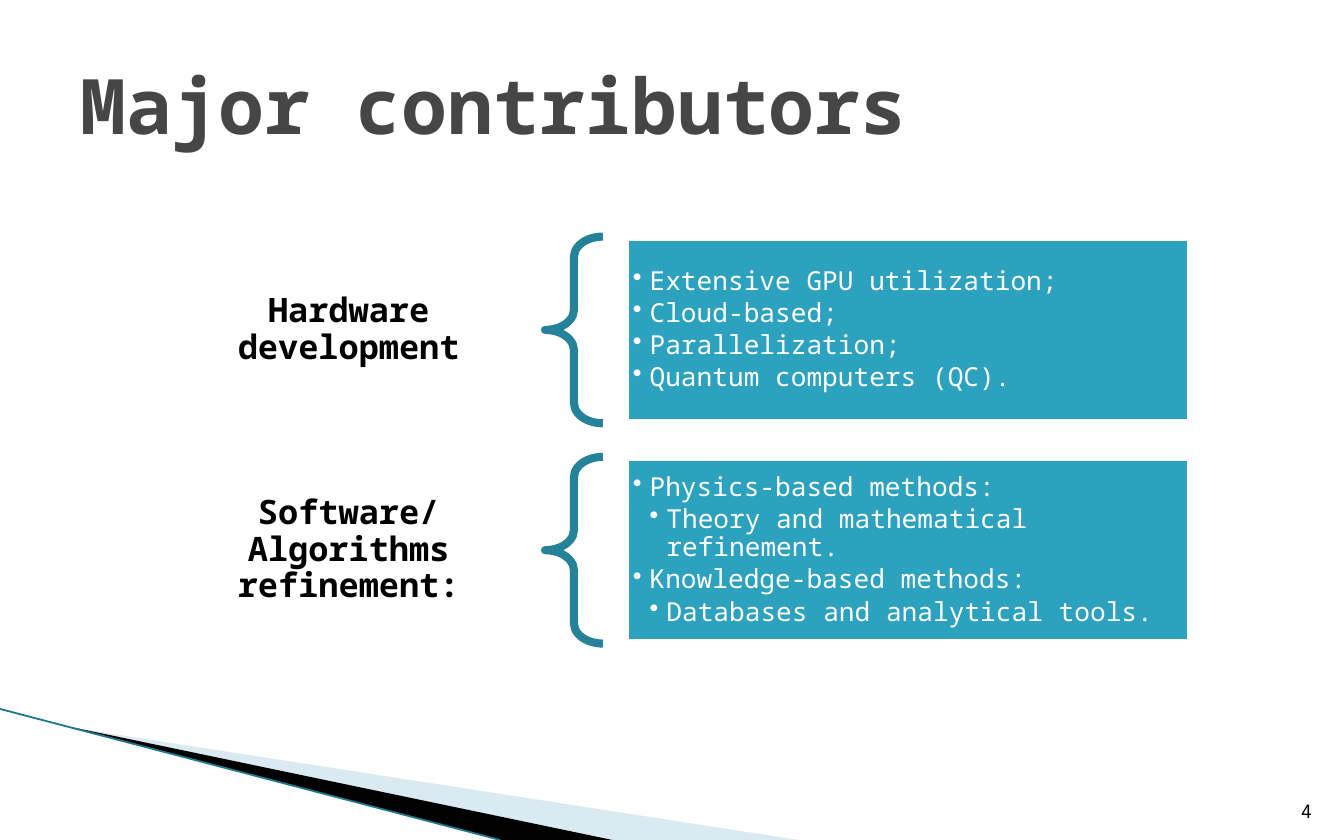
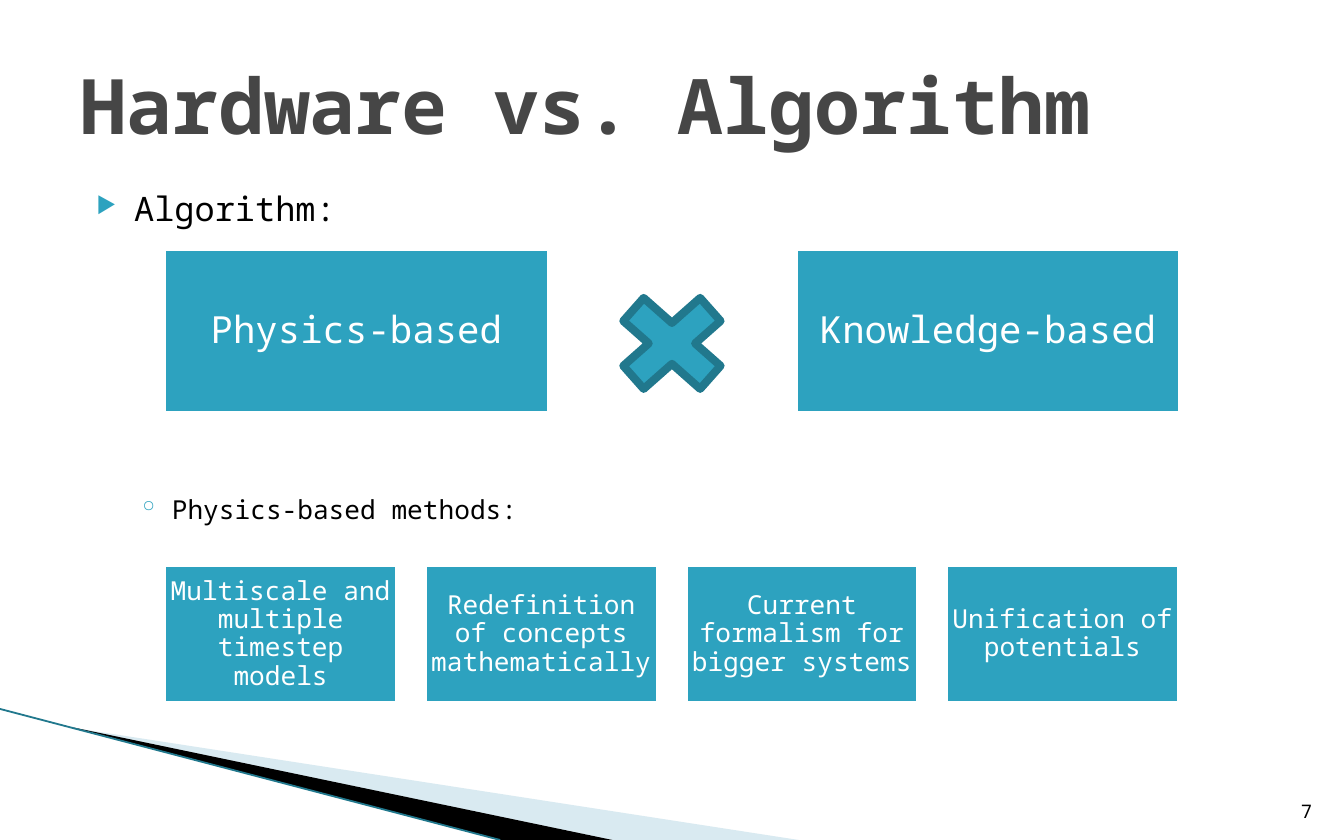
from collections.abc import Sequence
from dataclasses import dataclass

from lxml import etree
from pptx import Presentation
from pptx.dml.color import RGBColor
from pptx.enum.shapes import MSO_CONNECTOR, MSO_SHAPE
from pptx.enum.text import MSO_ANCHOR, PP_ALIGN
from pptx.oxml.ns import qn
from pptx.util import Pt

RECTANGLE, BRACE, CROSS = MSO_SHAPE.RECTANGLE, MSO_SHAPE.LEFT_BRACE, MSO_SHAPE.MATH_MULTIPLY
STRAIGHT = MSO_CONNECTOR.STRAIGHT
TOP, MIDDLE, BOTTOM = MSO_ANCHOR.TOP, MSO_ANCHOR.MIDDLE, MSO_ANCHOR.BOTTOM
LEFT, CENTER, RIGHT = PP_ALIGN.LEFT, PP_ALIGN.CENTER, PP_ALIGN.RIGHT


@dataclass(frozen=True)
class Theme:
    font: str = "Noto Sans Mono"
    ink: str = "000000"
    white: str = "FFFFFF"
    title: str = "464646"
    accent: str = "2DA2BF"
    brace: str = "248299"
    edge: str = "21788D"
    pale: str = "A0CBDC"
    title_size: float = 41
    label_size: float = 20
    heading_size: float = 18
    text_size: float = 14
    number_size: float = 10
    outline: float = 4.33
    hairline: float = 0.95
    tight: float = 0.9


THEME = Theme()
WIDTH, HEIGHT = 720, 450


@dataclass(frozen=True)
class Area:
    left: float
    top: float
    width: float
    height: float

    def lengths(self) -> tuple:
        return Pt(self.left), Pt(self.top), Pt(self.width), Pt(self.height)


@dataclass(frozen=True)
class Bullet:
    mark: str
    indent: float
    hanging: float
    color: str
    percent: int = 100


@dataclass(frozen=True)
class Item:
    text: str
    bullet: Bullet
    size: float = THEME.text_size
    before: float = 0


@dataclass(frozen=True)
class Contributor:
    name: str
    items: tuple[Item, ...]


POINT = Bullet("•", 9, 9, THEME.white)
SUBPOINT = Bullet("•", 18, 9, THEME.white)
ARROW = Bullet("▶", 28.8, 20.2, THEME.accent, 68)
RING = Bullet("◦", 49, 18, THEME.accent)

CONTRIBUTORS = (
    Contributor("Hardware development", (
        Item("Extensive GPU utilization;", POINT),
        Item("Cloud-based;", POINT),
        Item("Parallelization;", POINT),
        Item("Quantum computers (QC).", POINT),
    )),
    Contributor("Software/Algorithms refinement:", (
        Item("Physics-based methods:", POINT),
        Item("Theory and mathematical refinement.", SUBPOINT),
        Item("Knowledge-based methods:", POINT),
        Item("Databases and analytical tools.", SUBPOINT),
    )),
)
APPROACHES = ("Physics-based", "Knowledge-based")
METHODS = (
    "Multiscale and multiple timestep models",
    "Redefinition of concepts mathematically",
    "Current formalism for bigger systems",
    "Unification of potentials",
)


def rgb(color: str) -> RGBColor:
    return RGBColor.from_string(color)


def prepare_frame(frame, *, anchor=MIDDLE, inset=(7.2, 3.6)) -> None:
    frame.word_wrap = True
    frame.vertical_anchor = anchor
    frame.margin_left = frame.margin_right = Pt(inset[0])
    frame.margin_top = frame.margin_bottom = Pt(inset[1])


def write(para, text: str, *, size: float, color: str = THEME.ink, bold: bool = False,
          align=LEFT, spacing: float = 1, before: float = 0, after: float = 0) -> None:
    para.alignment = align
    para.line_spacing = spacing
    para.space_before, para.space_after = Pt(before), Pt(after)
    span = para.add_run()
    span.text = text
    span.font.name, span.font.size, span.font.bold = THEME.font, Pt(size), bold
    span.font.color.rgb = rgb(color)


def add_bullet(para, bullet: Bullet) -> None:
    properties = para._p.get_or_add_pPr()
    properties.set("marL", str(Pt(bullet.indent)))
    properties.set("indent", str(-Pt(bullet.hanging)))
    color = etree.SubElement(properties, qn("a:buClr"))
    etree.SubElement(color, qn("a:srgbClr"), val=bullet.color)
    etree.SubElement(properties, qn("a:buSzPct"), val=str(bullet.percent * 1000))
    etree.SubElement(properties, qn("a:buChar"), char=bullet.mark)


def write_list(frame, items: Sequence[Item], *, color: str, spacing: float = 1,
               after: float = 0) -> None:
    for index, item in enumerate(items):
        para = frame.add_paragraph() if index else frame.paragraphs[0]
        add_bullet(para, item.bullet)
        write(para, item.text, size=item.size, color=color, spacing=spacing,
              before=item.before, after=after)


def add_text(page, area: Area, text: str, *, anchor=MIDDLE, inset=(7.2, 3.6), **style) -> None:
    box = page.shapes.add_textbox(*area.lengths())
    prepare_frame(box.text_frame, anchor=anchor, inset=inset)
    write(box.text_frame.paragraphs[0], text, **style)


def add_figure(page, kind, area: Area, *, line: str, fill: str | None = THEME.accent):
    figure = page.shapes.add_shape(kind, *area.lengths())
    figure.shadow.inherit = False
    if fill:
        figure.fill.solid()
        figure.fill.fore_color.rgb = rgb(fill)
    else:
        figure.fill.background()
    figure.line.color.rgb = rgb(line)
    figure.line.width = Pt(THEME.outline)
    return figure


def add_panel(page, area: Area, *, inset: float):
    """Add an accent rectangle with a white edge and return its text frame."""
    panel = add_figure(page, RECTANGLE, area, line=THEME.white)
    prepare_frame(panel.text_frame, inset=(inset, inset))
    return panel.text_frame


def add_panel_row(page, labels: Sequence[str], first: Area, *, pitch: float, size: float,
                  inset: float) -> None:
    for index, label in enumerate(labels):
        area = Area(first.left + index * pitch, first.top, first.width, first.height)
        frame = add_panel(page, area, inset=inset)
        write(frame.paragraphs[0], label, size=size, color=THEME.white, align=CENTER,
              spacing=THEME.tight)


def add_wedge(page, corners: Sequence[tuple[float, float]], color: str,
              opacity: int = 100) -> None:
    start, *others = [(Pt(x), Pt(y)) for x, y in corners]
    builder = page.shapes.build_freeform(*start)
    builder.add_line_segments(others, close=True)
    wedge = builder.convert_to_shape()
    wedge.shadow.inherit = False
    wedge.line.fill.background()
    wedge.fill.solid()
    wedge.fill.fore_color.rgb = rgb(color)
    if opacity < 100:
        tint = wedge._element.spPr.find(qn("a:solidFill"))[0]
        etree.SubElement(tint, qn("a:alpha"), val=str(opacity * 1000))


def add_page(deck, title: str, number: int):
    """Add a page with the corner wedges, title and page number."""
    page = deck.slides.add_slide(deck.slide_layouts[6])
    add_wedge(page, [(39.6, 390), (428, HEIGHT), (328, HEIGHT)], THEME.pale, opacity=40)
    add_wedge(page, [(38.2, 389.5), (328, HEIGHT), (268, HEIGHT)], THEME.ink)
    rule = page.shapes.add_connector(STRAIGHT, Pt(0), Pt(379.8), Pt(268), Pt(HEIGHT))
    rule.line.color.rgb = rgb(THEME.edge)
    rule.line.width = Pt(THEME.hairline)
    etree.SubElement(rule._element.spPr, qn("a:effectLst"))
    add_text(page, Area(36, 18, 648, 75), title, size=THEME.title_size,
             color=THEME.title, bold=True)
    add_text(page, Area(681, 420.5, 29, 23.8), str(number), anchor=BOTTOM,
             size=THEME.number_size, align=RIGHT)
    return page


def build_contributors(deck) -> None:
    page = add_page(deck, "Major contributors", 4)
    height, pitch = 100, 118
    for index, contributor in enumerate(CONTRIBUTORS):
        top = 126.8 + index * pitch
        add_text(page, Area(82, top, 209.6, height), contributor.name, inset=(10, 3.6),
                 size=THEME.heading_size, bold=True, align=CENTER, spacing=THEME.tight)
        brace = add_figure(page, BRACE, Area(292, top, 31, height), line=THEME.brace, fill=None)
        brace.adjustments[0], brace.adjustments[1] = 0.35, 0.5
        frame = add_panel(page, Area(335, top, 303, height), inset=4)
        write_list(frame, contributor.items, color=THEME.white, spacing=THEME.tight, after=2.1)


def build_comparison(deck) -> None:
    page = add_page(deck, "Hardware vs. Algorithm", 7)
    outline = page.shapes.add_textbox(*Area(36, 97.2, 648, 296.6).lengths())
    prepare_frame(outline.text_frame, anchor=TOP)
    write_list(outline.text_frame, (
        Item("Algorithm:", ARROW, size=THEME.heading_size),
        Item("Physics-based methods:", RING, before=142),
    ), color=THEME.ink)
    add_panel_row(page, APPROACHES, Area(87, 132.5, 208, 90), pitch=338.4,
                  size=THEME.label_size, inset=5.8)
    add_figure(page, CROSS, Area(320.4, 149, 79.2, 70), line=THEME.edge)
    add_panel_row(page, METHODS, Area(87, 301.7, 126.8, 76.3), pitch=139.6,
                  size=THEME.text_size, inset=4)


def main() -> None:
    deck = Presentation()
    deck.slide_width, deck.slide_height = Pt(WIDTH), Pt(HEIGHT)
    build_contributors(deck)
    build_comparison(deck)
    deck.save("out.pptx")


if __name__ == "__main__":
    main()
